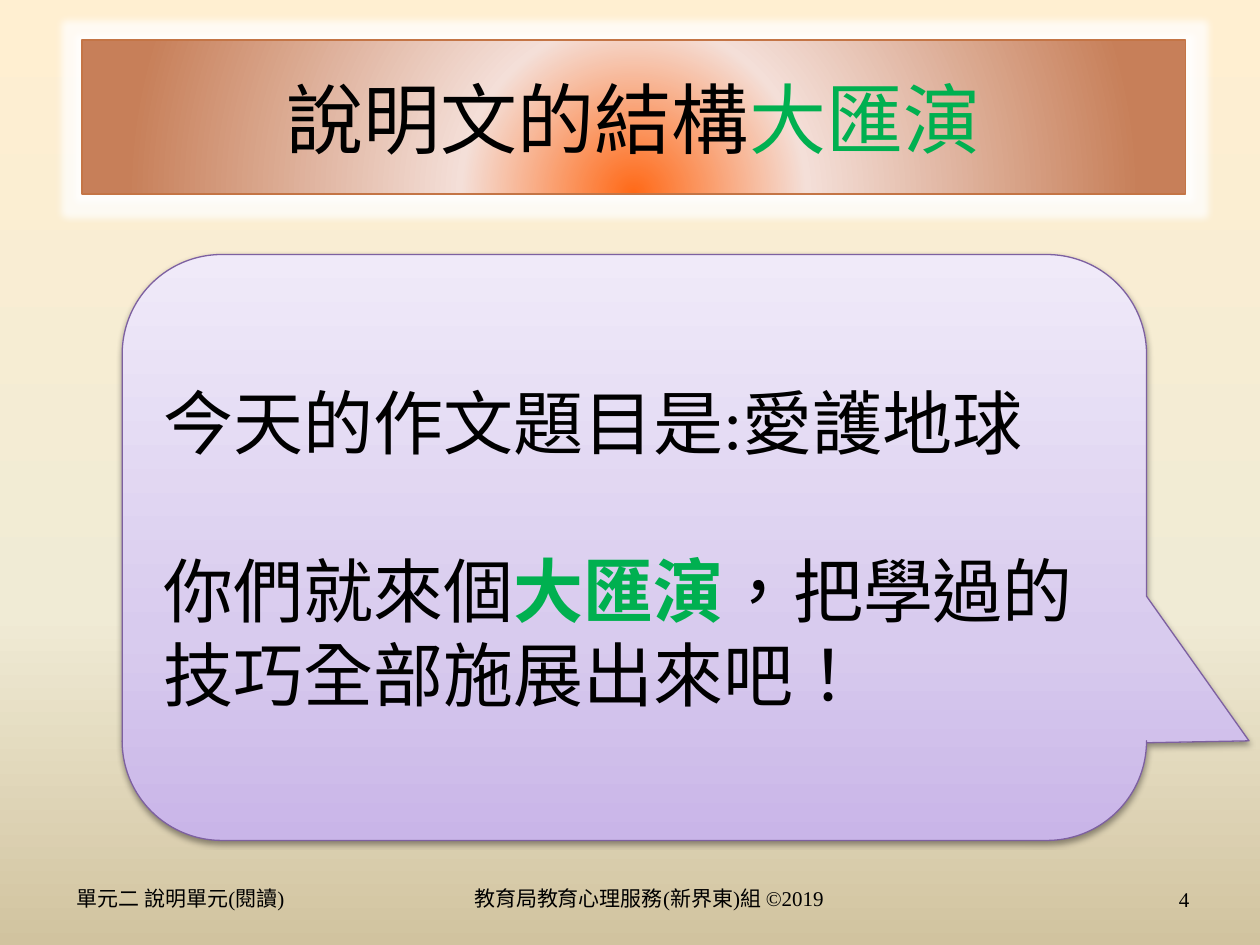
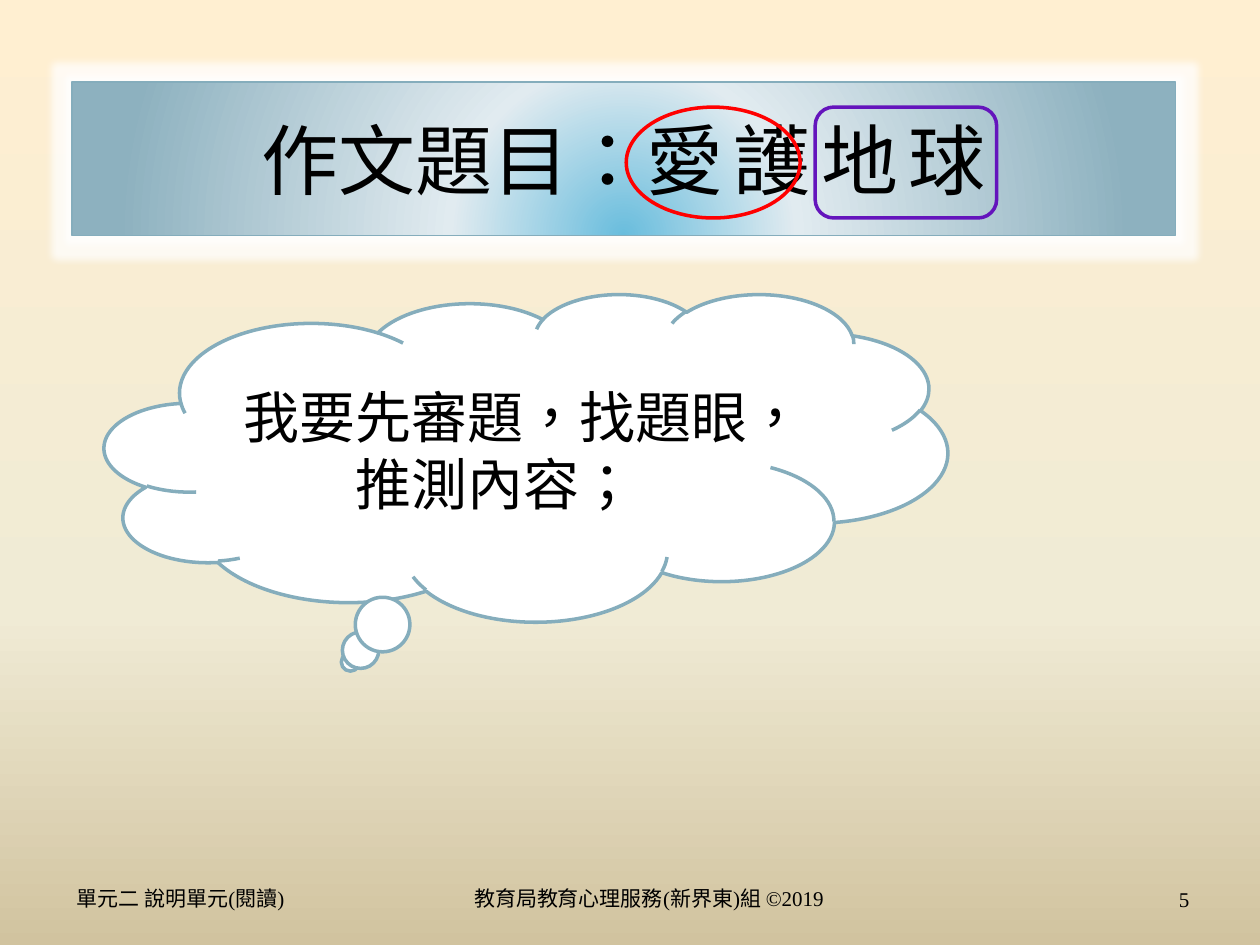
from lxml.etree import SubElement as Sub
from pptx import Presentation
from pptx.dml.color import RGBColor as Rgb
from pptx.enum.shapes import MSO_SHAPE as Kind
from pptx.enum.text import MSO_ANCHOR as Anchor, PP_ALIGN as Align
from pptx.oxml.ns import qn
from pptx.util import Inches, Pt

WIDE, HIGH = Inches(10), Inches(7.5)
COLS, ROWS = 100, 75
SERIF, SANS = "Times New Roman", "Noto Sans CJK SC"
HUES = {
    "ink": "000000", "green": "00B050", "white": "FFFFFF",
    "red": "FF0000", "violet": "6414BC", "plum": "7D60A0",
    "rust": "C47546", "steel": "85ADBC",
}
FADES = {
    "page": [(0, "FFEFD1"), (65, "F0EBD5"), (100, "D1C39F")],
    "rust": [(0, "FF6917"), (31, "F4DFD8"), (91, "C77F59")],
    "steel": [(0, "69BDDD"), (31, "E1EBF0"), (91, "8DB1BF")],
    "plum": [(0, "C9B5E8"), (35, "D8CBEE"), (100, "F0EAF9")],
}
BAND = (87.6, 12.2)


def place(box, col, row, wide, high):
    left, top = box[:2]
    return left + col, top + row, wide, high


def cells(box):
    col, row, wide, high = box
    return (int(WIDE * col / COLS), int(HIGH * row / ROWS),
            int(WIDE * wide / COLS), int(HIGH * high / ROWS))


def tint(root, hue, alpha):
    color = Sub(root, qn("a:srgbClr"), val=hue)
    Sub(color, qn("a:alpha"), val=str(alpha * 1000))


def fade(fill, root, name, angle=None):
    fill.solid()
    old = root.find(".//" + qn("a:solidFill"))
    grad = old.makeelement(qn("a:gradFill"), {"rotWithShape": "1"})
    old.getparent().replace(old, grad)
    stops = Sub(grad, qn("a:gsLst"))
    for spot, hue in FADES[name]:
        stop = Sub(stops, qn("a:gs"), pos=str(spot * 1000))
        Sub(stop, qn("a:srgbClr"), val=hue)
    if angle is None:
        core = Sub(grad, qn("a:path"), {"path": "circle"})
        Sub(core, qn("a:fillToRect"), l="50000", t="150000", r="50000")
    else:
        Sub(grad, qn("a:lin"), ang=str(angle * 60000), scaled="0")


def style(run, size, font=SERIF, hue="ink", bold=False, gap=0):
    run.font.size = Pt(size)
    run.font.name = font
    run.font.bold = bold
    run.font.color.rgb = Rgb.from_string(HUES[hue])
    props = run.font._element
    props.set("lang", "zh-TW")
    if gap:
        props.set("spc", str(gap * 100))
    Sub(props, qn("a:ea"), typeface=SANS)


def write(para, parts, size, align=Align.LEFT):
    para.alignment = align
    for text, looks in parts:
        run = para.add_run()
        run.text = text
        style(run, size, **looks)


def draw(slide, kind, box, hue, width):
    shape = slide.shapes.add_shape(kind, *cells(box))
    shape.shadow.inherit = False
    shape.fill.background()
    shape.line.color.rgb = Rgb.from_string(HUES[hue])
    shape.line.width = Pt(width)
    shape.text_frame.vertical_anchor = Anchor.MIDDLE
    return shape


def effect(shape, name, **looks):
    root = shape.element.spPr.find(qn("a:effectLst"))
    return Sub(root, qn("a:" + name), looks)


def band(slide, box, hue, parts):
    shape = draw(slide, Kind.RECTANGLE, box, hue, 1)
    fade(shape.fill, shape.element, hue)
    tint(effect(shape, "glow", rad=str(Pt(8))), HUES["white"], 75)
    write(shape.text_frame.paragraphs[0], parts, 44, Align.CENTER)


def marks(slide, box):
    draw(slide, Kind.OVAL, place(box, 44, 2, 13.8, 8.8), "red", 2)
    draw(slide, Kind.ROUNDED_RECTANGLE, place(box, 59, 2, 14.4, 8.8), "violet", 2)


def speech(slide, box):
    shape = draw(slide, Kind.ROUNDED_RECTANGULAR_CALLOUT, box, "plum", 0.75)
    for spot, value in enumerate((0.6, 0.33, 0.17)):
        shape.adjustments[spot] = value
    fade(shape.fill, shape.element, "plum", 270)
    shade = effect(shape, "outerShdw", blurRad=str(Pt(3.1)), dist=str(Pt(1.6)),
                   dir="5400000", rotWithShape="0")
    tint(shade, HUES["ink"], 38)
    frame = shape.text_frame
    write(frame.paragraphs[0], [("今天的作文題目是:愛護地球", {})], 40)
    para = frame.add_paragraph()
    para.space_before = Pt(48)
    write(para, [
        ("你們就來個", {}),
        ("大匯演", {"font": SANS, "hue": "green", "bold": True}),
        ("，把學過的技巧", {"font": SANS}),
        ("全部施展出來吧！", {}),
    ], 40)


def thought(slide, box):
    shape = draw(slide, Kind.CLOUD_CALLOUT, box, "steel", 2)
    shape.fill.solid()
    shape.fill.fore_color.rgb = Rgb.from_string(HUES["white"])
    text = "我要先審題，找題眼，推測內容；"
    write(shape.text_frame.paragraphs[0], [(text, {})], 32, Align.CENTER)


def footer(slide, box, number):
    high = box[3]
    for col, wide, text, align in (
        (0, 20, "單元二 說明單元(閱讀)", Align.LEFT),
        (26, 40.8, "教育局教育心理服務(新界東)組 ©2019", Align.CENTER),
        (79.8, 10, str(number), Align.RIGHT),
    ):
        note = slide.shapes.add_textbox(*cells(place(box, col, 0, wide, high)))
        frame = note.text_frame
        frame.word_wrap = True
        if align == Align.RIGHT:
            frame.vertical_anchor = Anchor.MIDDLE
            frame.margin_left = frame.margin_right = Inches(0.05)
        write(frame.paragraphs[0], [(text, {})], 12, align)


def page(deck, number):
    slide = deck.slides.add_slide(deck.slide_layouts[6])
    fade(slide.background.fill, slide.element, "page", 90)
    footer(slide, (5.1, 69.8, 89.8, 3.1), number)
    return slide


def topic(deck):
    slide = page(deck, 4)
    band(slide, (6.5, 3.2, *BAND), "rust", [
        ("說明文的結構", {"font": SANS}),
        ("大匯演", {"font": SANS, "hue": "green"}),
    ])
    speech(slide, (9.7, 20.2, 81.3, 46.5))


def review(deck):
    slide = page(deck, 5)
    box = (5.7, 6.5, *BAND)
    band(slide, box, "steel", [
        ("作文題目：", {"font": SANS}),
        ("愛護地球", {"font": SANS, "gap": 6}),
    ])
    marks(slide, box)
    thought(slide, (8.3, 23.3, 66.9, 26))


def main():
    deck = Presentation()
    deck.slide_width, deck.slide_height = WIDE, HIGH
    topic(deck)
    review(deck)
    deck.save("out.pptx")


if __name__ == "__main__":
    main()
